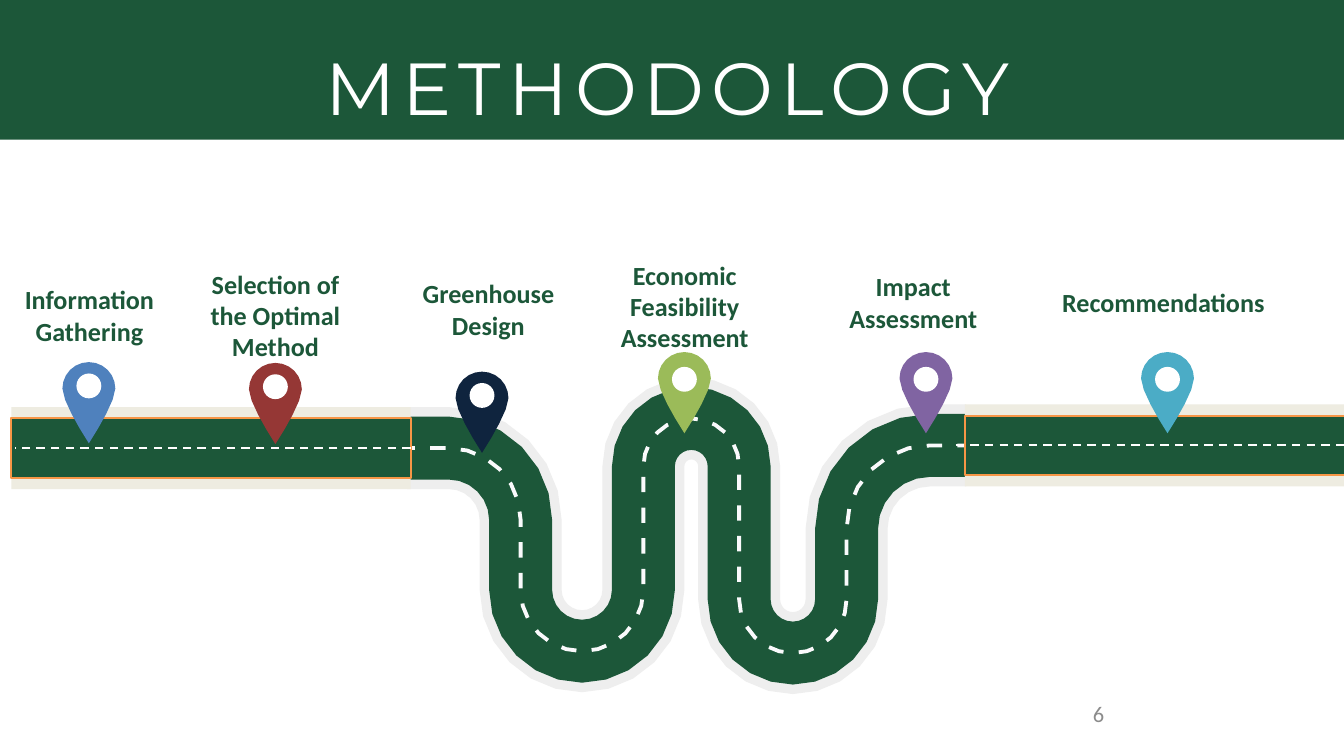
from math import ceil, cos, pi, radians, sin

from lxml import etree
from pptx import Presentation
from pptx.dml.color import RGBColor
from pptx.enum.dml import MSO_LINE_DASH_STYLE as Dash
from pptx.enum.shapes import MSO_CONNECTOR as Connector, MSO_SHAPE as Shape
from pptx.enum.text import MSO_ANCHOR as Anchor, PP_ALIGN as Align
from pptx.oxml.ns import qn
from pptx.util import Cm, Pt

GREEN, WHITE = "1C5739", "FFFFFF"

# Milestones: label, its centre, top, width and height, then pin centre, top, hole drop, colour
MILESTONES = [
    ("Information Gathering", (3.38, 10.85, 7.16, 2.11), (3.36, 13.69, 0.43, "4F81BD")),
    ("Selection of the Optimal Method", (10.41, 10.49, 7.16, 2.84), (10.41, 13.72, 0.43, "953735")),
    ("Greenhouse Design", (18.46, 10.26, 7.16, 2.84), (18.22, 14.05, 0.43, "0F243E")),
    ("Economic Feasibility Assessment", (25.88, 10.52, 7.16, 2.11), (25.87, 13.31, 0.56, "9BBB59")),
    ("Impact Assessment", (34.52, 10.36, 7.16, 2.11), (35.0, 13.31, 0.56, "8064A2")),
    ("Recommendations", (43.97, 10.36, 9.19, 2.11), (44.13, 13.31, 0.56, "4BACC6")),
]

# Winding road: start point, then (length or radius, turn in degrees; right is positive)
ROAD_START = (15.39, 16.94)
ROAD_LEGS = [
    (1.57, 0), (2.72, 90), (2.64, 0), (2.32, -180), (4.67, 0), (1.81, 180),
    (5.03, 0), (2.03, -180), (2.67, 0), (3.15, 90), (1.37, 0),
]
ARC_STEP = 15


def colour(hex_string):
    return RGBColor.from_string(hex_string)


def set_line(line, hex_string, width):
    line.color.rgb = colour(hex_string)
    line.width = Pt(width)


def paint(shape, fill, line=None):
    shape.shadow.inherit = False
    shape.fill.solid()
    shape.fill.fore_color.rgb = colour(fill)
    if line:
        set_line(shape.line, line, 2.25)
    else:
        shape.line.fill.background()


def add_preset(page, kind, left, top, width, height, fill, line=None):
    shape = page.shapes.add_shape(kind, Cm(left), Cm(top), Cm(width), Cm(height))
    paint(shape, fill, line)


def add_path(page, points, close=True):
    corners = [(Cm(x), Cm(y)) for x, y in points]
    builder = page.shapes.build_freeform(*corners[0])
    builder.add_line_segments(corners[1:], close=close)
    return builder.convert_to_shape()


def add_text(page, text, left, top, width, height, size, font, hex_string,
             align=Align.CENTER, anchor=Anchor.MIDDLE, inset=None, bold=False):
    box = page.shapes.add_textbox(Cm(left), Cm(top), Cm(width), Cm(height))
    frame = box.text_frame
    frame.word_wrap = True
    frame.vertical_anchor = anchor
    if inset is not None:
        frame.margin_left = frame.margin_right = Cm(inset)
        frame.margin_top = frame.margin_bottom = Cm(inset)
    para = frame.paragraphs[0]
    para.text = text
    para.alignment = align
    para.font.size = Pt(size)
    para.font.name = font
    para.font.bold = bold
    para.font.color.rgb = colour(hex_string)
    return para


def road_stations():
    """Points and headings along the centre line."""
    x, y = ROAD_START
    heading = 0
    stations = [(x, y, heading)]
    for size, turn in ROAD_LEGS:
        steps = ceil(abs(turn) / ARC_STEP) or 1
        for _ in range(steps):
            if turn:
                radius = size if turn > 0 else -size
                after = heading + radians(turn / steps)
                x += radius * (sin(after) - sin(heading))
                y += radius * (cos(heading) - cos(after))
                heading = after
            else:
                x += size * cos(heading)
                y += size * sin(heading)
            stations.append((x, y, heading))
    return stations


def add_winding_road(page):
    stations = road_stations()

    def side(offset):
        return [(x - offset * sin(a), y + offset * cos(a)) for x, y, a in stations]

    # Shoulder and surface
    for half_width, fill in [(1.55, "EEEEEE"), (1.19, GREEN)]:
        paint(add_path(page, side(-half_width) + side(half_width)[::-1]), fill)

    # Lane marks, started half a dash early so that half a dash shows first
    centre_line = side(0)
    start_x, start_y = centre_line[0]
    marks = add_path(page, [(start_x - 0.29, start_y)] + centre_line[1:], close=False)
    marks.shadow.inherit = False
    marks.fill.background()
    set_line(marks.line, "FAFAFC", 4.1)
    pattern = etree.SubElement(marks.line._get_or_add_ln(), qn("a:custDash"))
    etree.SubElement(pattern, qn("a:ds"), d="400000", sp="400000")


def add_straight_road(page, left, middle, width, dash_from, dash_to):
    add_preset(page, Shape.RECTANGLE, left, middle - 1.55, width, 3.1, "EEECE1")
    add_preset(page, Shape.RECTANGLE, left, middle - 1.12, width, 2.24, GREEN, "F79646")
    marks = page.shapes.add_connector(
        Connector.STRAIGHT, Cm(dash_from), Cm(middle), Cm(dash_to), Cm(middle))
    set_line(marks.line, WHITE, 2.25)
    marks.line.dash_style = Dash.DASH
    etree.SubElement(marks._element.spPr, qn("a:effectLst"))


def add_pin(page, centre, top, hole_drop, fill):
    dome = [(-cos(pi * i / 12), 1 - sin(pi * i / 12)) for i in range(13)]
    # Bezier side from the dome's edge down to the tip
    flank = []
    for t in (0.2, 0.4, 0.6, 1):
        rest = 1 - t
        flank.append((rest**3 + 3 * rest**2 * t,
                      rest**3 + 3 * rest**2 * t * 1.55 + (3 * rest * t**2 + t**3) * 3.07))
    mirrored = [(-x, y) for x, y in flank[-2::-1]]
    outline = [(centre + x, top + y) for x, y in dome + flank + mirrored]
    paint(add_path(page, outline), fill)
    add_preset(page, Shape.OVAL, centre - 0.47, top + hole_drop, 0.94, 0.94, WHITE)


def main():
    deck = Presentation()
    deck.slide_width, deck.slide_height = Cm(50.8), Cm(28.58)
    page = deck.slides.add_slide(deck.slide_layouts[6])

    # Road
    add_winding_road(page)
    add_straight_road(page, 36.47, 16.84, 14.86, 36.12, 51.33)
    add_straight_road(page, 0.43, 16.94, 15.09, 15.52, 0.56)

    # Milestones
    for text, (centre, top, width, height), pin in MILESTONES:
        add_text(page, text, centre - width / 2, top, width, height,
                 28, "Calibri", GREEN, inset=0.51, bold=True)
        add_pin(page, *pin)

    # Title banner
    add_preset(page, Shape.RECTANGLE, -1.07, -0.18, 52.91, 5.46, GREEN)
    title = add_text(page, "METHODOLOGY", 10.36, 1.09, 29.77, 3.66,
                     78.9, "Montserrat", WHITE, anchor=Anchor.TOP, inset=0)
    title.line_spacing = Pt(108.9)
    title.runs[0]._r.get_or_add_rPr().set("spc", "770")

    # Page number
    add_text(page, "6", 36.07, 26.47, 5.92, 1.02, 24, "Calibri", "8C8C8C", align=Align.RIGHT)

    deck.save("out.pptx")


if __name__ == "__main__":
    main()
